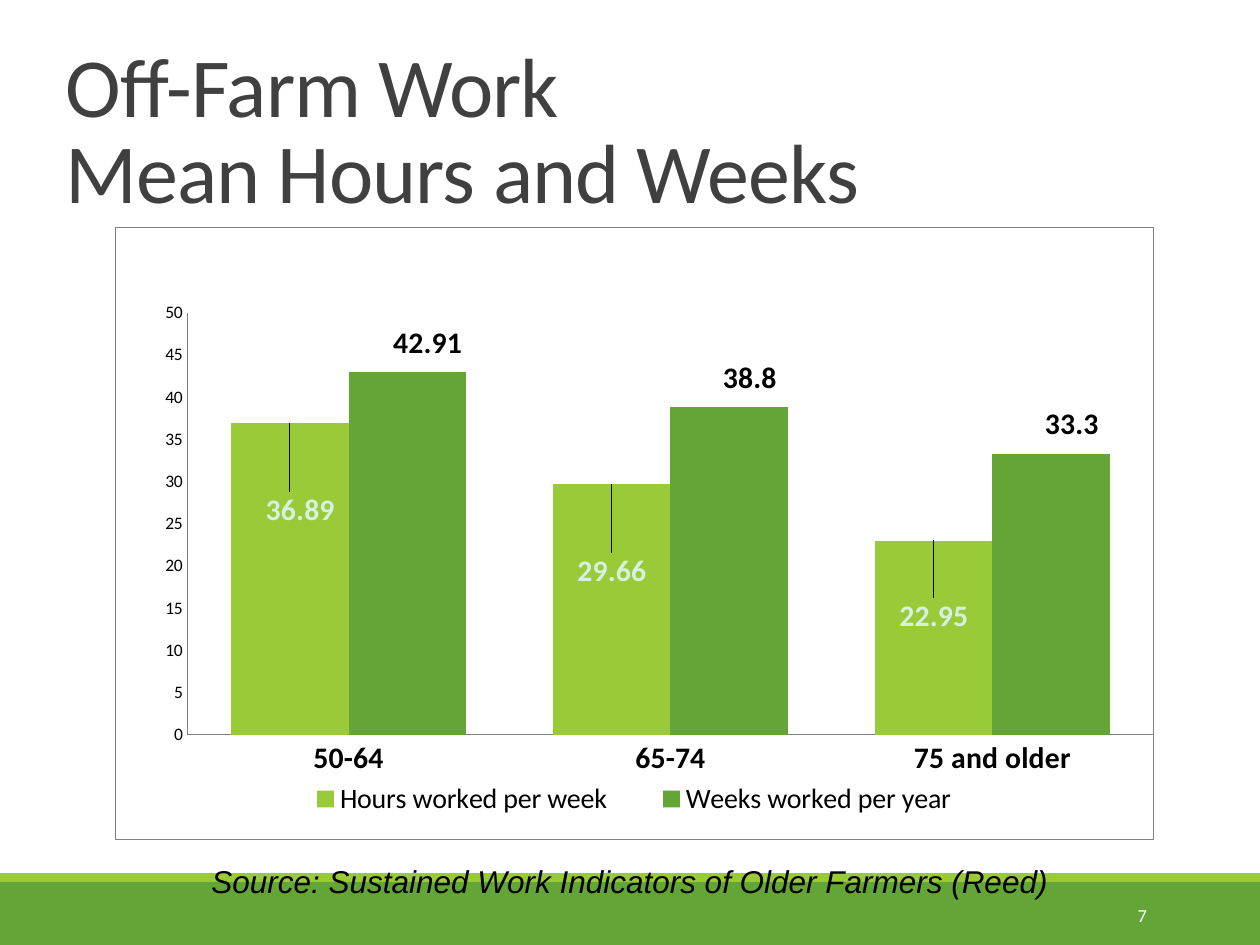
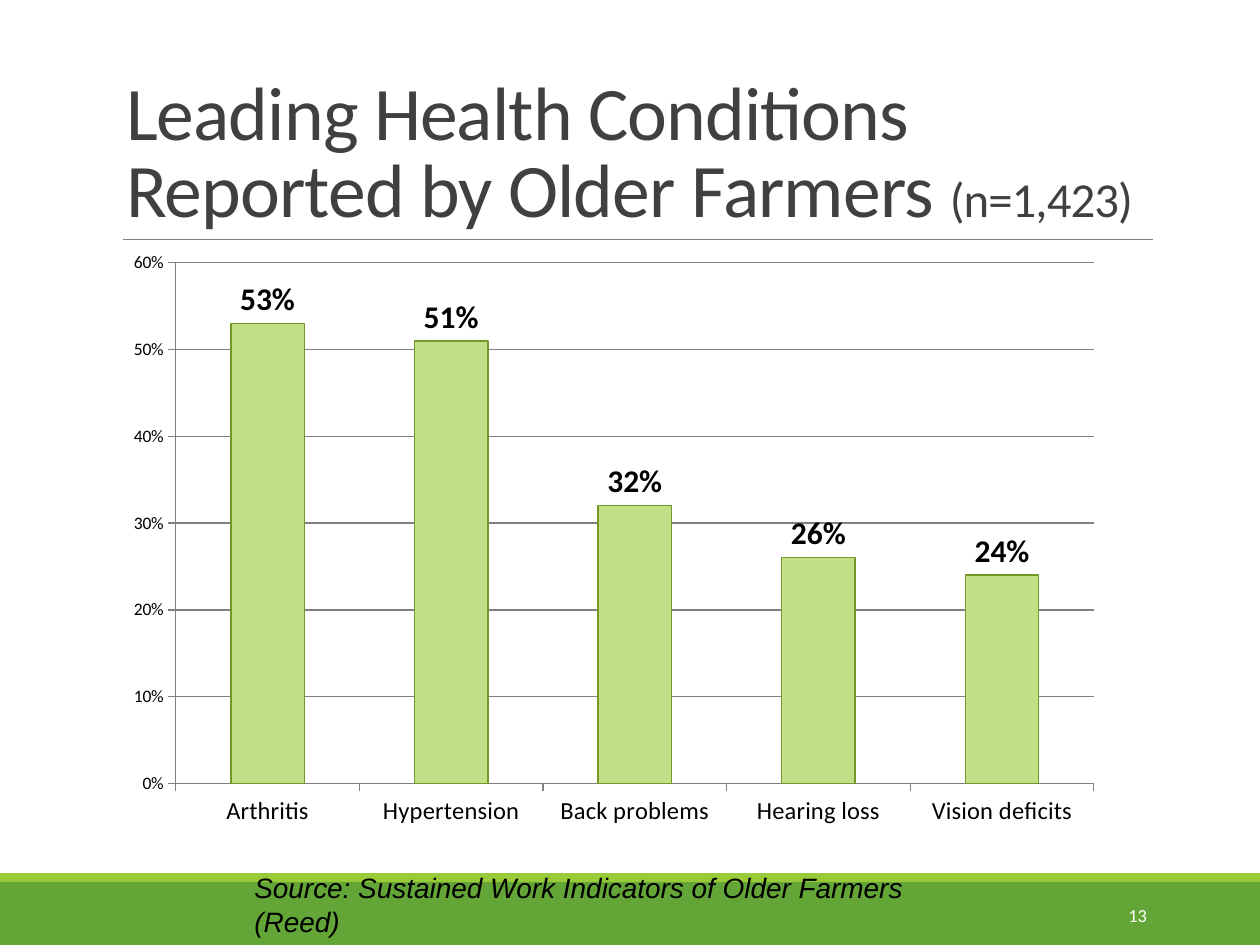
from lxml import etree
from pptx import Presentation, util as u
from pptx.chart.data import CategoryChartData
from pptx.dml.color import RGBColor
from pptx.enum import chart as ch, shapes, text
from pptx.oxml import parse_xml
from pptx.oxml.ns import nsdecls, qn

COLUMNS, ROWS = 100, 75
GREEN, LIME, PALE, OLIVE = "63A537", "99CB38", "C2E088", "739A28"
GRAY, AXIS, INK, MINT = "404040", "808080", "000000", "D4F1E2"
WHITE = "FFFFFF"
SOURCE = "Source: Sustained Work Indicators of Older Farmers (Reed)"


def color(hex_code):
    return RGBColor.from_string(hex_code)


def set_font(font, **values):
    """Apply a dict of font values; size is in points, color is hex."""
    for key, value in values.items():
        if key == "color":
            font.color.rgb = color(value)
        else:
            setattr(font, key, u.Pt(value) if key == "size" else value)


def set_line(line, hex_code, width):
    line.color.rgb = color(hex_code)
    line.width = u.Pt(width)


def manual_layout(x, y, w=None, h=None, inner=False):
    """Chart layout element; every value is a share of the chart's size."""
    target = '<c:layoutTarget val="inner"/>' if inner else ""
    modes = "" if w is None else '<c:xMode val="edge"/><c:yMode val="edge"/>'
    sizes = "".join(f'<c:{tag} val="{value}"/>'
                    for tag, value in zip("xywh", (x, y, w, h)) if value is not None)
    return parse_xml(f'<c:layout {nsdecls("c")}><c:manualLayout>{target}{modes}{sizes}'
                     '</c:manualLayout></c:layout>')


class Deck:
    def __init__(self):
        self.prs = Presentation()
        self.prs.slide_width, self.prs.slide_height = u.Inches(10), u.Inches(7.5)
        self.slide = None

    def place(self, left, top, width, height):
        col, row = self.prs.slide_width / COLUMNS, self.prs.slide_height / ROWS
        return [round(n) for n in (left * col, top * row, width * col, height * row)]

    def new_slide(self):
        self.slide = self.prs.slides.add_slide(self.prs.slide_layouts[5])
        self.band((0, 70, COLUMNS, 5), GREEN)
        self.band((0, 69.3, COLUMNS, 0.7), LIME)
        self.rule(9.8, 91.5, 19)

    def band(self, box, fill):
        band = self.slide.shapes.add_shape(shapes.MSO_SHAPE.RECTANGLE, *self.place(*box))
        band.shadow.inherit = False
        band.fill.solid()
        band.fill.fore_color.rgb = color(fill)
        band.line.fill.background()

    def rule(self, start, end, row):
        left, top, width, _ = self.place(start, row, end - start, 0)
        rule = self.slide.shapes.add_connector(
            shapes.MSO_CONNECTOR.STRAIGHT, left, top, left + width, top)
        set_line(rule.line, AXIS, 0.5)
        etree.SubElement(rule._element.spPr, qn("a:effectLst"))

    def title(self, box, lines, size, note=None, note_size=None):
        title = self.slide.shapes.title
        title.left, title.top, title.width, title.height = self.place(*box)
        frame = title.text_frame
        frame.text = "\v".join(lines)
        frame.word_wrap = True
        frame.auto_size = text.MSO_AUTO_SIZE.NONE
        frame.vertical_anchor = text.MSO_ANCHOR.BOTTOM
        heading = frame.paragraphs[0]
        heading.alignment, heading.line_spacing = text.PP_ALIGN.LEFT, 0.85
        if note:
            heading.add_run().text = note
        for run in heading.runs:
            set_font(run.font, name="Calibri", color=GRAY,
                     size=note_size if run.text == note else size)
            run._r.get_or_add_rPr().set("spc", "-50")

    def label(self, box, words, align=text.PP_ALIGN.LEFT,
              anchor=text.MSO_ANCHOR.TOP, **font):
        frame = self.slide.shapes.add_textbox(*self.place(*box)).text_frame
        frame.word_wrap, frame.vertical_anchor = True, anchor
        line = frame.paragraphs[0]
        line.alignment = align
        run = line.add_run()
        run.text = words
        set_font(run.font, **font)

    def source(self, box, size):
        self.label(box, SOURCE, name="Arial", size=size, italic=True, color=INK)

    def page_number(self, number):
        self.label((81.2, 70.6, 10.8, 4), str(number), text.PP_ALIGN.RIGHT,
                   text.MSO_ANCHOR.MIDDLE, name="Calibri", size=10.5, color=WHITE)

    def columns(self, box, categories, series, plot_area, gap, top, step,
                number_format, tick, category_font, grid=False):
        """Clustered columns; series maps each name to its values and fill."""
        data = CategoryChartData(number_format=number_format)
        data.categories = categories
        for name, (values, _) in series.items():
            data.add_series(name, values)
        chart = self.slide.shapes.add_chart(
            ch.XL_CHART_TYPE.COLUMN_CLUSTERED, *self.place(*box), data).chart
        chart.has_title = chart.has_legend = False
        set_font(chart.font, name="Calibri", size=10, color=INK)
        chart._chartSpace.chart.plotArea.insert(0, manual_layout(*plot_area, inner=True))
        for extra in chart._chartSpace.chart.plotArea.findall(qn("c:layout"))[1:]:
            extra.getparent().remove(extra)

        plot = chart.plots[0]
        plot.gap_width, plot.overlap, plot.vary_by_categories = gap, 0, False
        for bars, (_, fill) in zip(plot.series, series.values()):
            bars.format.fill.solid()
            bars.format.fill.fore_color.rgb = color(fill)

        for axis in (chart.category_axis, chart.value_axis):
            axis.major_tick_mark, axis.minor_tick_mark = tick, ch.XL_TICK_MARK.NONE
            axis.has_major_gridlines = False
            set_line(axis.format.line, AXIS, 0.75)
        set_font(chart.category_axis.tick_labels.font, **category_font)
        scale = chart.value_axis
        scale.minimum_scale, scale.maximum_scale, scale.major_unit = 0, top, step
        scale.tick_labels.number_format = number_format
        scale.tick_labels.number_format_is_linked = False
        if grid:
            scale.has_major_gridlines = True
            set_line(scale.major_gridlines.format.line, AXIS, 0.75)
        return chart

    def value_labels(self, series, offsets=None, **font):
        """Labels above the columns, each moved by its offset if one is given."""
        labels = series.data_labels
        labels.show_value = True
        labels.position = ch.XL_LABEL_POSITION.OUTSIDE_END
        set_font(labels.font, **font)
        for index, offset in enumerate(offsets or []):
            label = series.points[index].data_label
            set_font(label.font, **font)
            label.position = ch.XL_LABEL_POSITION.OUTSIDE_END
            series._element.xpath(".//c:dLbl")[index].insert(1, manual_layout(*offset))

    def legend(self, chart, area, size):
        chart.has_legend = True
        legend = chart.legend
        legend.position, legend.include_in_layout = ch.XL_LEGEND_POSITION.BOTTOM, False
        set_font(legend.font, size=size, color=INK)
        for old in legend._element.findall(qn("c:layout")):
            legend._element.remove(old)
        legend._element.find(qn("c:legendPos")).addnext(manual_layout(*area))

    def chart_frame(self, chart, fill, border):
        chart._chartSpace.chart.addnext(parse_xml(
            f'<c:spPr {nsdecls("c", "a")}>'
            f'<a:solidFill><a:srgbClr val="{fill}"/></a:solidFill><a:ln w="3175">'
            f'<a:solidFill><a:srgbClr val="{border}"/></a:solidFill></a:ln></c:spPr>'))


def off_farm_work(deck):
    deck.new_slide()
    deck.title((4.2, 3.3, 90.3, 14.7), ["Off-Farm Work", "Mean Hours and Weeks"], 48)
    work = deck.columns(
        (9.1, 18, 82.5, 48.6), ["50-64", "65-74", "75 and older"],
        {"Hours worked per week": ([36.89, 29.66, 22.95], LIME),
         "Weeks worked per year": ([42.91, 38.8, 33.3], GREEN)},
        plot_area=(0.07, 0.14, 0.93, 0.69), gap=75, top=50, step=5,
        number_format="General", tick=ch.XL_TICK_MARK.NONE,
        category_font={"size": 17, "bold": True})
    hours, weeks = work.plots[0].series
    deck.value_labels(hours, [(0.01, 0.18), (0, 0.18), (0, 0.16)],
                      size=17, bold=True, color=MINT)
    deck.value_labels(weeks, [(0.02, -0.01)] * 3, size=17, bold=True, color=INK)
    deck.legend(work, (0.15, 0.9, 0.7, 0.07), 16)
    deck.chart_frame(work, WHITE, AXIS)
    deck.source((15.8, 67.9, 72.4, 4), 18)
    deck.page_number(7)


def health_conditions(deck):
    deck.new_slide()
    deck.title((9, 3.1, 82.5, 15.9),
               ["Leading Health Conditions", "Reported by Older Farmers "], 43.2,
               note="(n=1,423)", note_size=27.9)
    conditions = deck.columns(
        (9.2, 19.2, 79.2, 47.5),
        ["Arthritis", "Hypertension", "Back problems", "Hearing loss", "Vision deficits"],
        {"Series 1": ([0.53, 0.51, 0.32, 0.26, 0.24], PALE)},
        plot_area=(0.06, 0.035, 0.92, 0.87), gap=150, top=0.6, step=0.1,
        number_format="0%", tick=ch.XL_TICK_MARK.OUTSIDE,
        category_font={"size": 14}, grid=True)
    shares = conditions.plots[0].series[0]
    set_line(shares.format.line, OLIVE, 0.75)
    deck.value_labels(shares, size=18, bold=True, color=INK)
    deck.source((19.2, 68.6, 54.5, 3.7), 16)
    deck.page_number(13)


def main():
    deck = Deck()
    off_farm_work(deck)
    health_conditions(deck)
    deck.prs.save("out.pptx")


if __name__ == "__main__":
    main()
